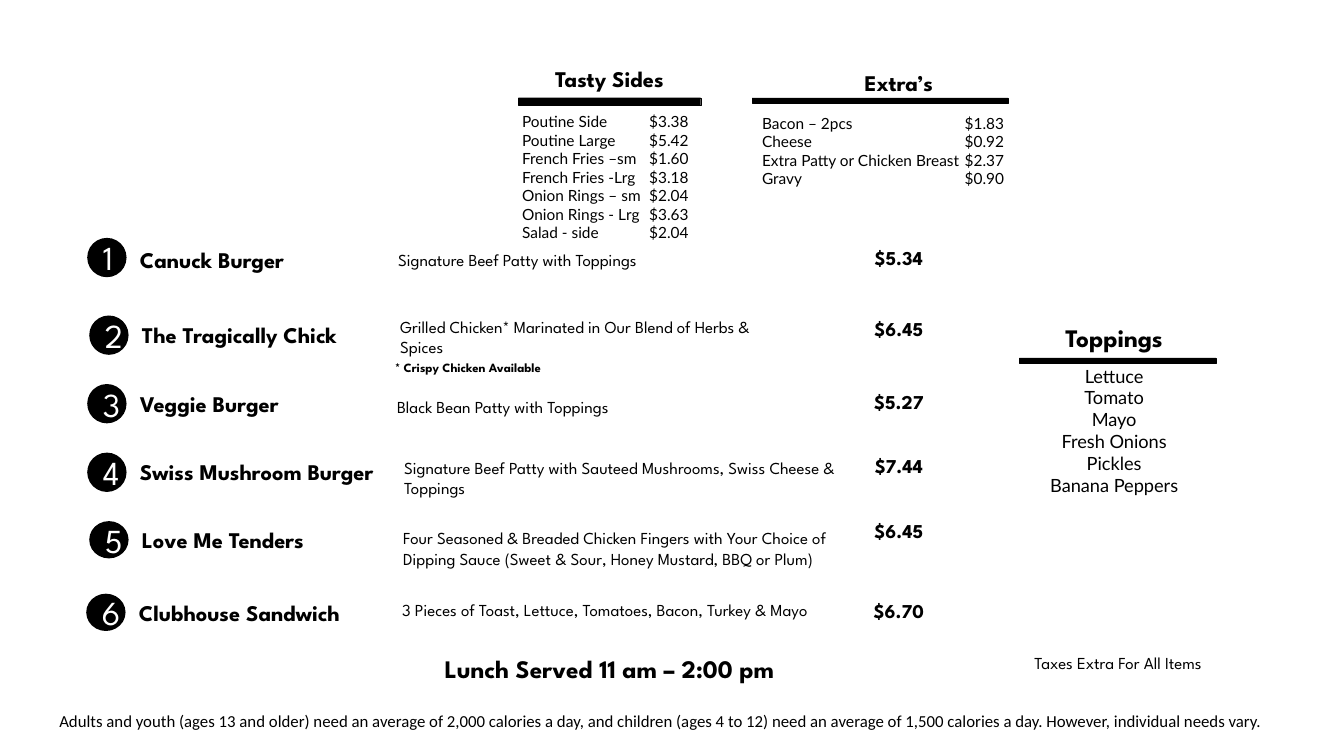
from pptx import Presentation
from pptx.dml.color import RGBColor
from pptx.enum.shapes import MSO_SHAPE as Shape
from pptx.enum.text import MSO_ANCHOR as Anchor, MSO_AUTO_SIZE as AutoSize, PP_ALIGN as Align
from pptx.util import Inches, Pt

COLORS = {"ink": "000000", "paper": "FFFFFF"}
HEADING, LIST, NOTE = "League Spartan", "Lato", "Calibri"

deck = Presentation()
deck.slide_width, deck.slide_height = Inches(13.33), Inches(7.5)
COLUMN, ROW = deck.slide_width / 133.3, deck.slide_height / 75
page = deck.slides.add_slide(deck.slide_layouts[5])


def write(box, lines, size, font=HEADING, bold=False, align=Align.LEFT, color="ink"):
    frame = box.text_frame
    frame.word_wrap = True
    frame.auto_size = AutoSize.NONE
    frame.text = "\n".join(lines)
    for para in frame.paragraphs:
        para.alignment = align
        para.font.name, para.font.size, para.font.bold = font, Pt(size), bold
        para.font.color.rgb = RGBColor.from_string(COLORS[color])


def place(left, top, width, height, kind=None):
    area = [round(left * COLUMN), round(top * ROW), round(width * COLUMN), round(height * ROW)]
    if kind is None:
        return page.shapes.add_textbox(*area)
    shape = page.shapes.add_shape(kind, *area)
    shape.shadow.inherit = False
    shape.fill.solid()
    shape.fill.fore_color.rgb = RGBColor.from_string(COLORS["ink"])
    shape.line.fill.background()
    return shape


hours = page.shapes.title
hours.left, hours.top = round(32.6 * COLUMN), round(64.3 * ROW)
hours.width, hours.height = round(55.7 * COLUMN), round(4 * ROW)
hours.text_frame.vertical_anchor = Anchor.TOP
write(hours, ["Lunch Served 11 am – 2:00 pm"], 18, bold=True, align=Align.CENTER)

for text, size, left, top, width, bar in [
    ("Tasty Sides", 16, 49.8, 6, 21.3, (51.4, 9.7, 18.1, 0.7)),
    ("Extra’s", 16, 78.5, 6.4, 21.3, (74.6, 9.7, 25.4, 0.5)),
    ("Toppings", 18, 102.8, 31.5, 15.4, (101.1, 35.5, 19.5, 0.5)),
]:
    write(place(left, top, width, 4), [text], size, bold=True, align=Align.CENTER)
    rule = place(*bar, Shape.RECTANGLE)
    rule.line.color.rgb = RGBColor.from_string(COLORS["ink"])
    rule.line.width = Pt(0.25)

sides = [
    ("Poutine Side", "$3.38"),
    ("Poutine Large", "$5.42"),
    ("French Fries –sm", "$1.60"),
    ("French Fries -Lrg", "$3.18"),
    ("Onion Rings – sm", "$2.04"),
    ("Onion Rings - Lrg", "$3.63"),
    ("Salad - side", "$2.04"),
]
extras = [
    ("Bacon – 2pcs", "$1.83"),
    ("Cheese", "$0.92"),
    ("Extra Patty or Chicken Breast", "$2.37"),
    ("Gravy", "$0.90"),
]
for entries, top, name_left, name_width, price_left, price_width in [
    (sides, 10.65, 50.8, 14.4, 63.4, 9.3),
    (extras, 10.8, 74.6, 23.6, 94.7, 6.4),
]:
    names, prices = zip(*entries)
    height = 2 * len(entries)
    write(place(name_left, top, name_width, height), names, 11, LIST)
    write(place(price_left, top, price_width, height), prices, 11, LIST)

toppings = ["Lettuce", "Tomato", "Mayo", "Fresh Onions", "Pickles", "Banana Peppers"]
write(place(98.4, 35.7, 24.2, 14.1), toppings, 13, LIST, align=Align.CENTER)

meals = [
    ("Canuck Burger", 12.9, 23.9, 23.6, "$5.34", 23.9,
     "Signature Beef Patty with Toppings", 38.5, 24.3, 47.7),
    ("The Tragically Chick", 13.1, 31.4, 31.3, "$6.45", 30.9,
     "Grilled Chicken* Marinated in Our Blend of Herbs & Spices", 38.7, 30.9, 40.1),
    ("Veggie Burger", 12.9, 38.2, 38.1, "$5.27", 38.2,
     "Black Bean Patty with Toppings", 38.4, 38.9, 47.7),
    ("Swiss Mushroom Burger", 12.9, 45, 44.9, "$7.44", 44.5,
     "Signature Beef Patty with Sauteed Mushrooms, Swiss Cheese & Toppings", 39.1, 44.9, 45),
    ("Love Me Tenders", 13.1, 51.7, 51.7, "$6.45", 51,
     "Four Seasoned & Breaded Chicken Fingers with Your Choice of "
     "Dipping Sauce (Sweet & Sour, Honey Mustard, BBQ or Plum)", 39, 51.9, 46.2),
    ("Clubhouse Sandwich", 12.8, 58.9, 58.9, "$6.70", 58.9,
     "3 Pieces of Toast, Lettuce, Tomatoes, Bacon, Turkey & Mayo", 38.9, 59, 44.1),
]
for number, meal in enumerate(meals, 1):
    name, name_left, name_top, badge_top, price, price_top, about, left, top, width = meal
    badge = place(name_left - 4.25, badge_top, 3.9, 3.9 if number < 5 else 3.7, Shape.OVAL)
    badge.text_frame.vertical_anchor = Anchor.MIDDLE
    write(badge, [str(number)], 24, align=Align.CENTER, color="paper")
    write(place(name_left, name_top, 28.4, 3.7), [name], 16, bold=True)
    write(place(left, top, width, 5), [about], 12)
    write(place(83.9, price_top, 10.5, 3.4), [price], 14, bold=True, align=Align.CENTER)

write(place(38.2, 35.2, 49.1, 2.5), ["* Crispy Chicken Available"], 9, bold=True)
write(place(96.8, 64.3, 28.2, 3), ["Taxes Extra For All Items"], 12, align=Align.CENTER)
write(
    place(4.9, 70, 122.6, 3),
    ["Adults and youth (ages 13 and older) need an average of 2,000 calories a day, and children "
     "(ages 4 to 12) need an average of 1,500 calories a day. However, individual needs vary."],
    12, NOTE,
)

deck.save("out.pptx")
